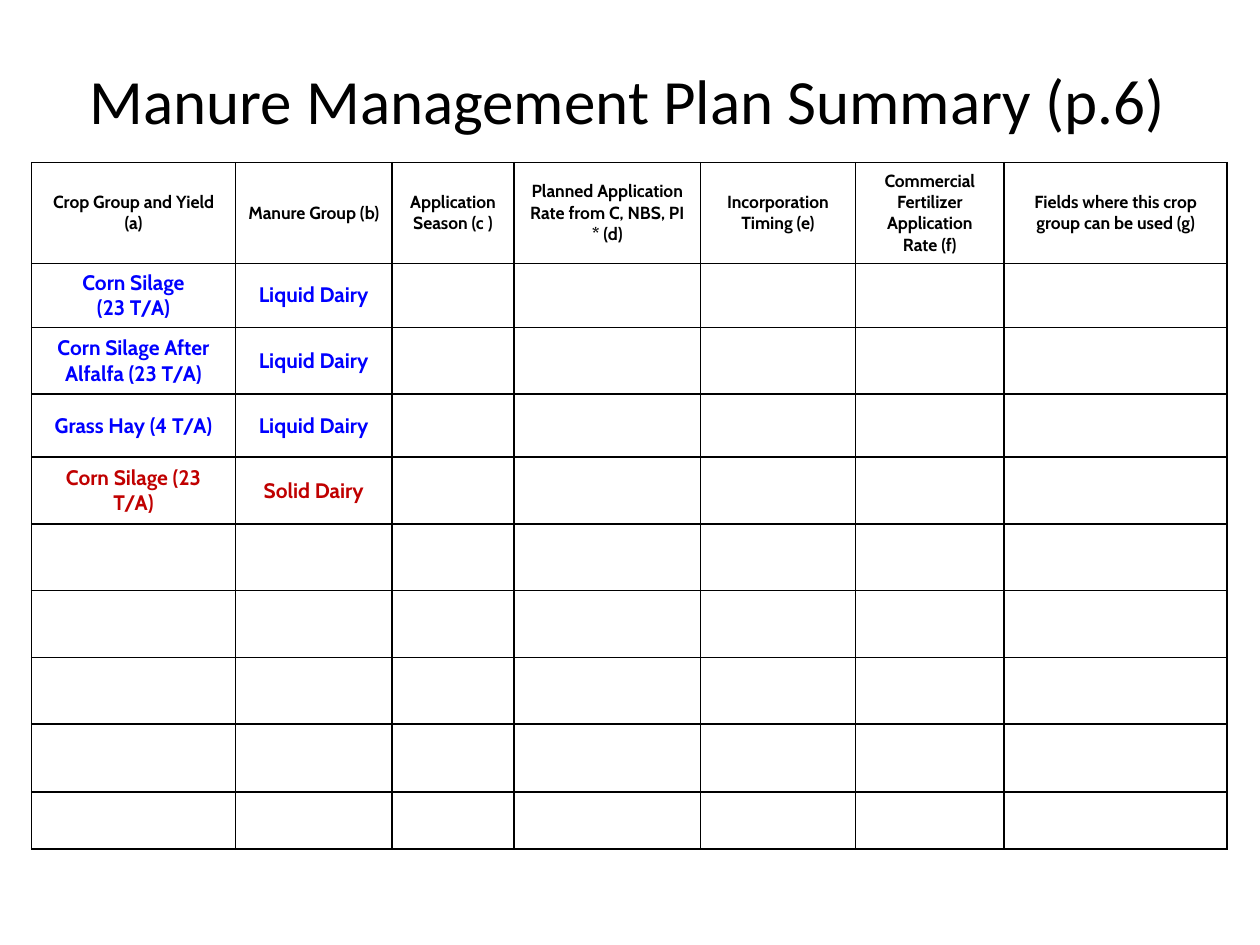
from lxml import etree
from pptx import Presentation
from pptx.dml.color import RGBColor
from pptx.enum.text import MSO_ANCHOR, PP_ALIGN
from pptx.oxml.ns import qn
from pptx.util import Inches, Pt

MIDDLE = MSO_ANCHOR.MIDDLE
CENTER = PP_ALIGN.CENTER
BLACK, WHITE, BLUE, RED = "000000", "FFFFFF", "0000FF", "C00000"

COLUMN_WIDTHS = [1.62, 1.24, 0.97, 1.48, 1.23, 1.18, 1.77]
ROW_HEIGHTS = [0.8, 0.5, 0.53, 0.5] + [0.53] * 4 + [0.54, 0.45]
HEADERS = [
    "Crop Group and Yield (a)",
    "Manure Group (b)",
    "Application Season (c )",
    "Planned Application Rate from C, NBS, PI * (d)",
    "Incorporation Timing (e)",
    "Commercial Fertilizer Application Rate (f)",
    "Fields where this crop group can be used (g)",
]
CROPS = [
    ("Corn Silage\n(23 T/A)", "Liquid Dairy", BLUE),
    ("Corn Silage After Alfalfa (23 T/A)", "Liquid Dairy", BLUE),
    ("Grass Hay (4 T/A)", "Liquid Dairy", BLUE),
    ("Corn Silage (23 T/A)", "Solid Dairy", RED),
]


def rgb(color):
    return RGBColor.from_string(color)


def format_runs(text_frame, font_name, size, color, bold=False):
    for para in text_frame.paragraphs:
        for span in para.runs:
            span.font.name = font_name
            span.font.size = Pt(size)
            span.font.bold = bold
            span.font.color.rgb = rgb(color)


def add_title(page, text):
    box = page.shapes.add_textbox(Inches(0.71), Inches(0.39), Inches(8.91), Inches(0.8))
    frame = box.text_frame
    frame.word_wrap = True
    frame.vertical_anchor = MIDDLE
    frame.margin_left = frame.margin_right = 0
    frame.text = text
    format_runs(frame, "Calibri", 36, BLACK)


def set_borders(cell, color, width):
    properties = cell._tc.get_or_add_tcPr()
    for side in ("a:lnL", "a:lnR", "a:lnT", "a:lnB"):
        line = etree.SubElement(properties, qn(side), w=str(Pt(width)))
        fill = etree.SubElement(line, qn("a:solidFill"))
        etree.SubElement(fill, qn("a:srgbClr"), val=color)


def fill_cell(cell, text, size, color):
    cell.text_frame.text = text
    for para in cell.text_frame.paragraphs:
        para.alignment = CENTER
    format_runs(cell.text_frame, "Cabin", size, color, bold=True)


def add_plan_table(page):
    table = page.shapes.add_table(
        len(ROW_HEIGHTS), len(COLUMN_WIDTHS), Inches(0.25), Inches(1.29),
        Inches(sum(COLUMN_WIDTHS)), Inches(sum(ROW_HEIGHTS)),
    ).table
    table.first_row = table.horz_banding = False
    for column, width in zip(table.columns, COLUMN_WIDTHS):
        column.width = Inches(width)
    for row, height in zip(table.rows, ROW_HEIGHTS):
        row.height = Inches(height)
    for cell in table.iter_cells():
        set_borders(cell, BLACK, 1)
        cell.fill.solid()
        cell.fill.fore_color.rgb = rgb(WHITE)
        cell.vertical_anchor = MIDDLE
    for column, header in enumerate(HEADERS):
        fill_cell(table.cell(0, column), header, 10, BLACK)
    for row, (crop, manure, color) in enumerate(CROPS, start=1):
        fill_cell(table.cell(row, 0), crop, 12, color)
        fill_cell(table.cell(row, 1), manure, 12, color)


def main():
    deck = Presentation()
    deck.slide_width, deck.slide_height = Inches(10), Inches(7.5)
    page = deck.slides.add_slide(deck.slide_layouts[6])
    add_plan_table(page)
    add_title(page, "Manure Management Plan Summary (p.6)")
    deck.save("out.pptx")


if __name__ == "__main__":
    main()
